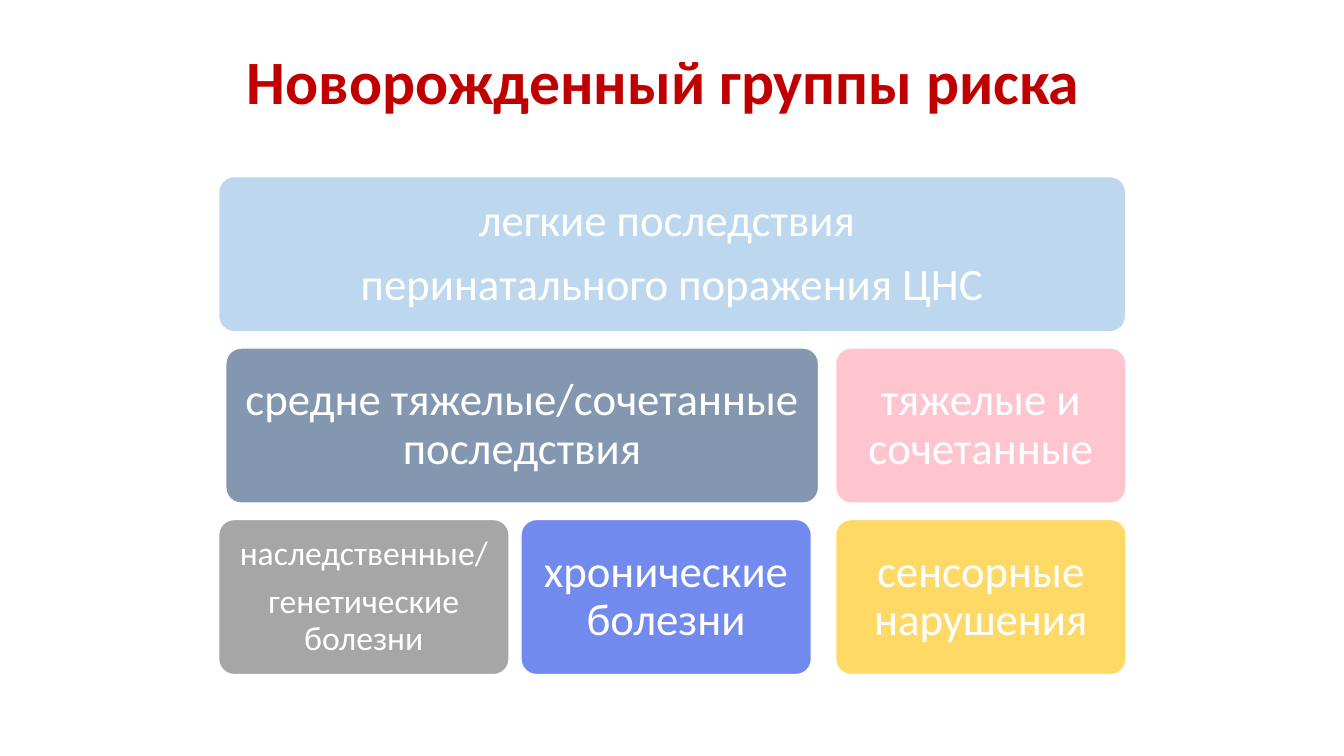
from pptx import Presentation
from pptx.dml.color import RGBColor
from pptx.enum.shapes import MSO_SHAPE
from pptx.enum.text import MSO_ANCHOR, PP_ALIGN
from pptx.util import Cm, Pt

ROUND = MSO_SHAPE.ROUNDED_RECTANGLE
MIDDLE = MSO_ANCHOR.MIDDLE
LEFT, CENTER = PP_ALIGN.LEFT, PP_ALIGN.CENTER

# Content: row, left, width, fill, text size, paragraphs
TITLE = "Новорожденный группы риска"
GROUPS = [
    (0, 5.51, 22.86, "BDD7EE", 32,
     ["легкие последствия ", "перинатального поражения ЦНС"]),
    (1, 5.69, 14.94, "8497B0", 32, ["средне тяжелые/сочетанные последствия"]),
    (2, 5.51, 7.32, "A6A6A6", 24, ["наследственные/", "генетические болезни"]),
    (2, 13.13, 7.32, "728AEE", 32, ["хронические болезни"]),
    (1, 21.06, 7.32, "FFC5CF", 32, ["тяжелые и сочетанные"]),
    (2, 21.06, 7.32, "FFD966", 32, ["сенсорные нарушения"]),
]

# Layout in centimetres
TOP, PITCH, HEIGHT = 4.45, 4.32, 3.91


def color(code):
    return RGBColor.from_string(code)


def apply(item, values):
    for name, value in values.items():
        setattr(item, name, value)


def write(frame, lines, size, code, bold, align, pad, after):
    apply(frame, {"word_wrap": True, "vertical_anchor": MIDDLE,
                  "margin_left": pad, "margin_right": pad,
                  "margin_top": pad, "margin_bottom": pad})
    for i, line in enumerate(lines):
        para = frame.paragraphs[0] if i == 0 else frame.add_paragraph()
        apply(para, {"alignment": align, "line_spacing": 0.9,
                     "space_before": Pt(0), "space_after": Pt(after)})
        run = para.add_run()
        run.text = line
        apply(run.font, {"name": "Calibri", "size": Pt(size), "bold": bold})
        run.font.color.rgb = color(code)


def add_group(slide, row, left, width, fill, size, lines):
    box = slide.shapes.add_shape(ROUND, Cm(left), Cm(TOP + row * PITCH),
                                 Cm(width), Cm(HEIGHT))
    box.adjustments[0] = 0.1
    box.shadow.inherit = False
    box.fill.solid()
    box.fill.fore_color.rgb = color(fill)
    box.line.color.rgb = color("FFFFFF")
    box.line.width = Pt(1)
    pad = Cm(0.34 if size > 24 else 0.27)
    write(box.text_frame, lines, size, "FFFFFF", False, CENTER, pad,
          round(size * 0.35, 1))


def main():
    deck = Presentation()
    apply(deck, {"slide_width": Cm(33.87), "slide_height": Cm(19.05)})
    slide = deck.slides.add_slide(deck.slide_layouts[5])

    # Title
    title = slide.shapes.title
    apply(title, {"left": Cm(5.97), "top": Cm(1.07),
                  "width": Cm(22.4), "height": Cm(2.13)})
    write(title.text_frame, [TITLE], 44, "C00000", True, LEFT, Cm(0.25), 0)

    # Risk groups
    for group in GROUPS:
        add_group(slide, *group)

    deck.save("out.pptx")


if __name__ == "__main__":
    main()
